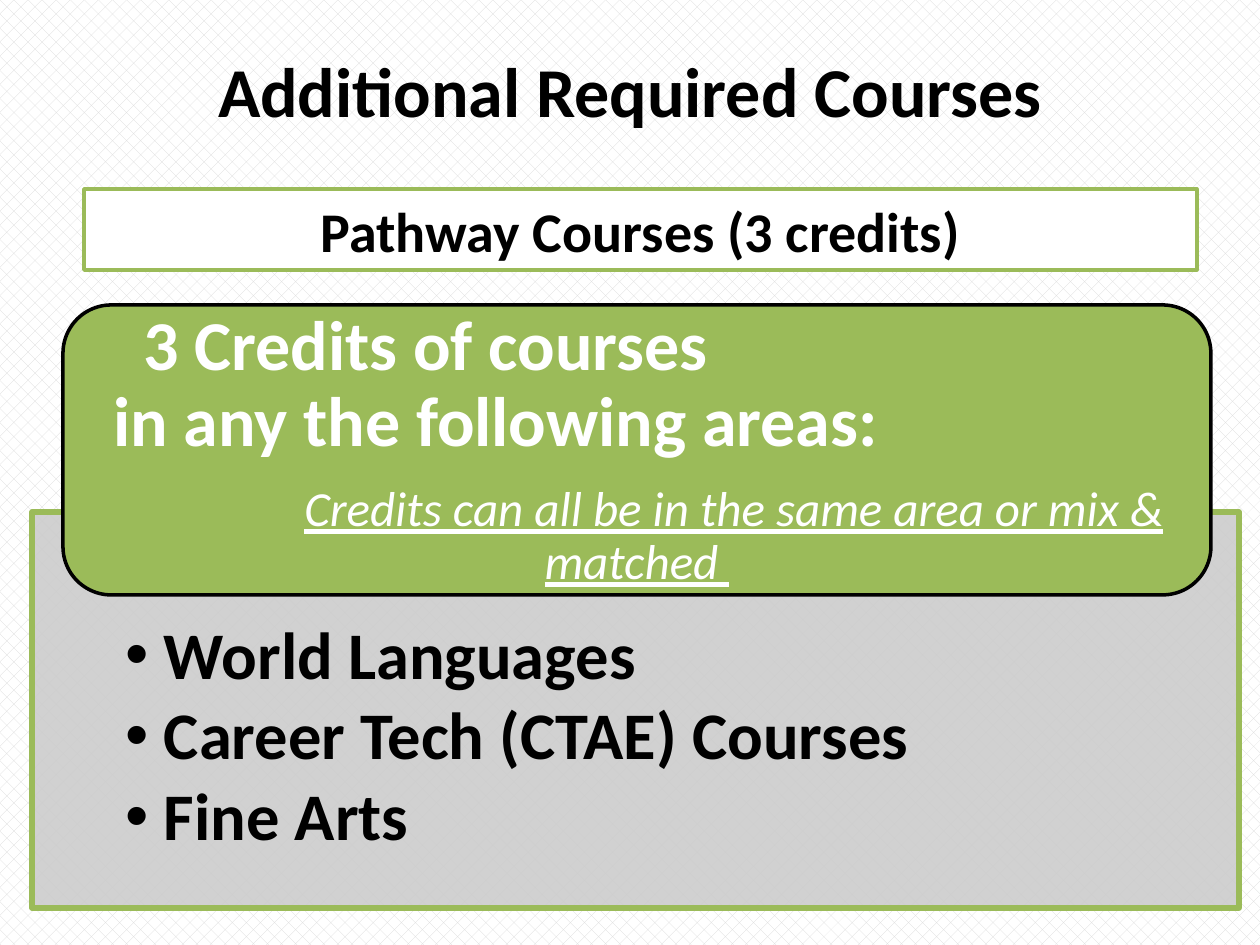
from lxml import etree
from pptx import Presentation
from pptx.dml.color import RGBColor
from pptx.enum.dml import MSO_PATTERN
from pptx.enum.shapes import MSO_SHAPE
from pptx.enum.text import MSO_ANCHOR, PP_ALIGN
from pptx.oxml.ns import qn
from pptx.util import Emu, Pt

PX = 914400 // 126
FONT = "Calibri"
BLACK, WHITE, GREEN, GRAY = "000000", "FFFFFF", "9BBB59", "CCCCCC"
HEADING = {"size": Pt(40), "bold": True}
SUBHEADING = {"size": Pt(32), "bold": True}
AREA = {"size": Pt(38), "bold": True}
REMARK = {"size": Pt(28), "italic": True, "underline": True}
CENTER = {"alignment": PP_ALIGN.CENTER}
AREA_SPACING = {"alignment": PP_ALIGN.LEFT, "line_spacing": 0.9, "space_after": Pt(5)}
INTRO_SPACING = {"alignment": PP_ALIGN.LEFT, "line_spacing": 0.9}
REMARK_SPACING = {**CENTER, "line_spacing": 0.9, "space_before": Pt(13)}

AREAS = ["World Languages", "Career Tech (CTAE) Courses", "Fine Arts"]

# Paragraphs: text, font values, spacing values, (left margin, first indent) in px, bullet
TITLE = [("Additional Required Courses", HEADING, CENTER, (0, 0), None)]
PATHWAY = [("Pathway Courses (3 credits)", SUBHEADING, CENTER, (0, 0), None)]
AREA_LIST = [(area, AREA, AREA_SPACING, (39, -39), "•") for area in AREAS]
INTRO = [
    ("3 Credits of courses\vin any the following areas:", HEADING, INTRO_SPACING, (4, 30), None),
    ("Credits can all be in the same area or mix & matched ", REMARK, REMARK_SPACING, (0, 194), None),
]

# Boxes, back to front; insets are left, top, right, bottom
BOXES = [
    {"at": (63, 10, 1134, 158), "text": TITLE, "color": BLACK, "anchor": MSO_ANCHOR.MIDDLE},
    {"at": (84, 189, 1113, 81), "text": PATHWAY, "color": BLACK, "anchor": MSO_ANCHOR.BOTTOM,
     "form": MSO_SHAPE.RECTANGLE, "fill": WHITE, "line": (GREEN, 2)},
    {"at": (32, 512, 1207, 396), "text": AREA_LIST, "color": BLACK, "anchor": MSO_ANCHOR.TOP,
     "form": MSO_SHAPE.RECTANGLE, "fill": GRAY, "opacity": 90, "line": (GREEN, 3),
     "insets": (93, 110, 93, 38)},
    {"at": (63, 305, 1148, 290), "text": INTRO, "color": WHITE, "anchor": MSO_ANCHOR.MIDDLE,
     "form": MSO_SHAPE.ROUNDED_RECTANGLE, "fill": GREEN, "line": (BLACK, 2),
     "insets": (32, 0, 32, 0)},
]


def px(length):
    return Emu(length * PX)


def rgb(color):
    return RGBColor.from_string(color)


def set_values(target, values):
    for name, value in values.items():
        setattr(target, name, value)


def paint(shape, item):
    shape.shadow.inherit = False
    shape.fill.solid()
    shape.fill.fore_color.rgb = rgb(item["fill"])
    if "opacity" in item:
        color = shape.fill._xPr.find(qn("a:solidFill"))[0]
        etree.SubElement(color, qn("a:alpha"), val=str(item["opacity"] * 1000))
    line_color, width = item["line"]
    shape.line.color.rgb = rgb(line_color)
    shape.line.width = Pt(width)


def indent(para, margin, first, bullet):
    properties = para._p.get_or_add_pPr()
    properties.set("marL", str(px(margin)))
    properties.set("indent", str(px(first)))
    if bullet:
        etree.SubElement(properties, qn("a:buFont"), typeface="Arial")
        etree.SubElement(properties, qn("a:buChar"), char=bullet)


def write(frame, item):
    set_values(frame, {"word_wrap": True, "vertical_anchor": item["anchor"]})
    sides = ("margin_left", "margin_top", "margin_right", "margin_bottom")
    set_values(frame, dict(zip(sides, map(px, item.get("insets", (12, 6, 12, 6))))))
    for number, (text, font, spacing, margins, bullet) in enumerate(item["text"]):
        para = frame.add_paragraph() if number else frame.paragraphs[0]
        para.text = text
        set_values(para, spacing)
        indent(para, *margins, bullet)
        for span in para.runs:
            set_values(span.font, {"name": FONT, **font})
            span.font.color.rgb = rgb(item["color"])


def add_box(page, item):
    place = [px(length) for length in item["at"]]
    if "form" in item:
        box = page.shapes.add_shape(item["form"], *place)
        paint(box, item)
    else:
        box = page.shapes.add_textbox(*place)
    write(box.text_frame, item)


def main():
    deck = Presentation()
    deck.slide_width, deck.slide_height = px(1260), px(945)
    page = deck.slides.add_slide(deck.slide_layouts[6])
    backdrop = page.background.fill
    backdrop.patterned()
    backdrop.pattern = MSO_PATTERN.PERCENT_25
    backdrop.fore_color.rgb = rgb("D9D9D9")
    backdrop.back_color.rgb = rgb(WHITE)
    for item in BOXES:
        add_box(page, item)
    deck.save("out.pptx")


if __name__ == "__main__":
    main()
